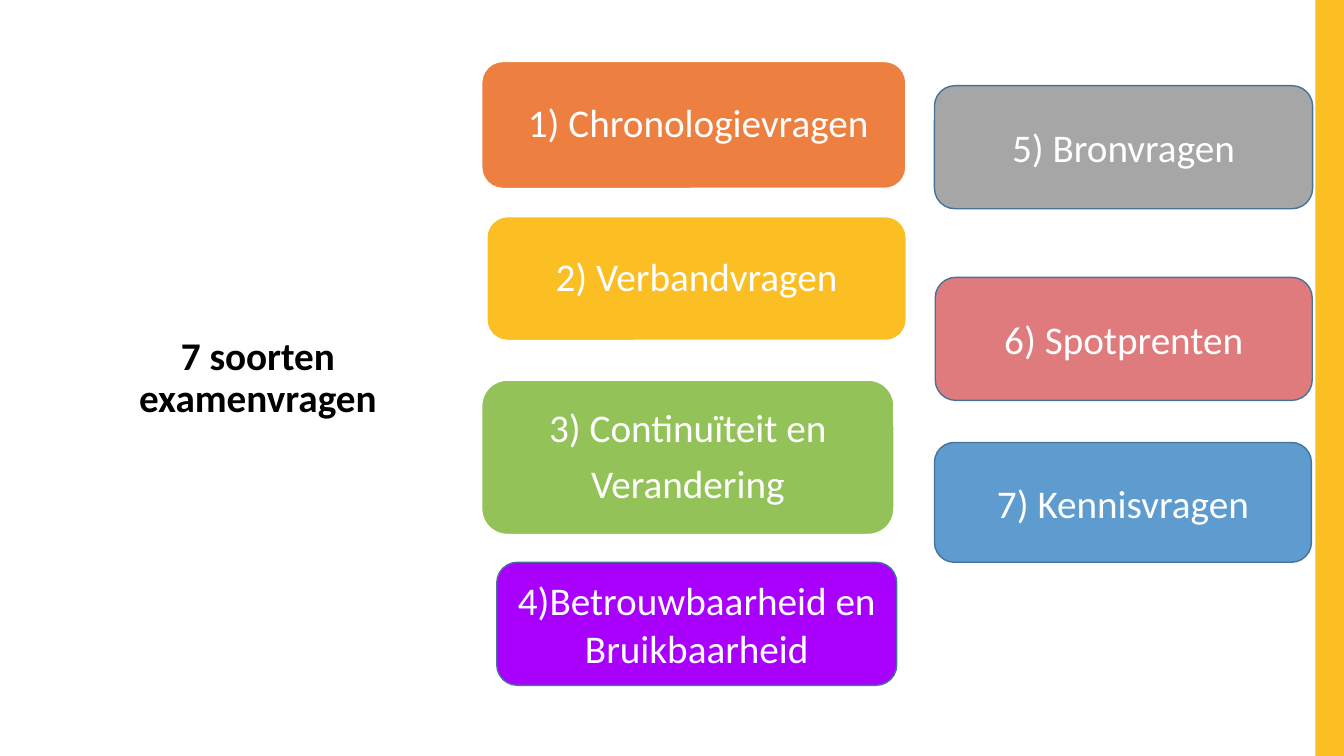
import pptx
import pptx.util
import pptx.dml.color
import pptx.enum.shapes
import pptx.enum.text

Cm = pptx.util.Cm
Pt = pptx.util.Pt
RGBColor = pptx.dml.color.RGBColor
Shape = pptx.enum.shapes.MSO_SHAPE

BLACK = RGBColor(0x00, 0x00, 0x00)
WHITE = RGBColor(0xFF, 0xFF, 0xFF)
AMBER = RGBColor(0xFB, 0xBF, 0x24)
ORANGE = RGBColor(0xED, 0x80, 0x40)
YELLOW = RGBColor(0xFB, 0xBE, 0x23)
GREEN = RGBColor(0x93, 0xC3, 0x58)
PURPLE = RGBColor(0xA9, 0x00, 0xFE)
GREY = RGBColor(0xA6, 0xA6, 0xA6)
ROSE = RGBColor(0xDF, 0x7B, 0x7D)
BLUE = RGBColor(0x5E, 0x9B, 0xCF)
STEEL = RGBColor(0x46, 0x73, 0x99)

QUESTION_TYPES = [
    ([" 1) Chronologievragen"], (12.14, 1.55, 10.69, 3.2), ORANGE, WHITE, 0.9),
    (["2) Verbandvragen"], (12.27, 5.46, 10.57, 3.12), YELLOW, WHITE, 0.9),
    (["3) Continuïteit en", "Verandering"], (12.14, 9.58, 10.39, 3.89), GREEN, WHITE, 0.9),
    (["4)Betrouwbaarheid en Bruikbaarheid"], (12.52, 14.17, 10.08, 3.1), PURPLE, STEEL, 1.0),
    (["5) Bronvragen"], (23.55, 2.16, 9.53, 3.1), GREY, STEEL, 1.0),
    (["6) Spotprenten"], (23.57, 6.99, 9.5, 3.1), ROSE, STEEL, 1.0),
    (["7) Kennisvragen"], (23.55, 11.15, 9.5, 3.02), BLUE, STEEL, 1.0),
]


class SlideBuilder:
    font_name = "Calibri"
    font_size = Pt(28)
    paragraph_gap = Pt(9.8)

    def __init__(self, page):
        self.page = page

    def label(self, box, lines, color, spacing, bold=False):
        frame = box.text_frame
        frame.word_wrap = True
        frame.vertical_anchor = pptx.enum.text.MSO_ANCHOR.MIDDLE
        for index, line in enumerate(lines):
            para = frame.add_paragraph() if index else frame.paragraphs[0]
            para.text = line
            para.alignment = pptx.enum.text.PP_ALIGN.CENTER
            para.line_spacing = spacing
            if index < len(lines) - 1:
                para.space_after = self.paragraph_gap
            para.font.name = self.font_name
            para.font.size = self.font_size
            para.font.bold = bold
            para.font.color.rgb = color

    def shape(self, kind, area, fill):
        box = self.page.shapes.add_shape(kind, *map(Cm, area))
        box.shadow.inherit = False
        box.fill.solid()
        box.fill.fore_color.rgb = fill
        return box

    def bar(self, area, fill):
        self.shape(Shape.RECTANGLE, area, fill).line.fill.background()

    def title(self, text, area):
        box = self.page.shapes.add_textbox(*map(Cm, area))
        self.label(box, [text], BLACK, 0.9, bold=True)

    def card(self, lines, area, fill, outline, spacing):
        box = self.shape(Shape.ROUNDED_RECTANGLE, area, fill)
        box.line.color.rgb = outline
        box.line.width = Pt(1)
        self.label(box, lines, WHITE, spacing)


def main():
    deck = pptx.Presentation()
    deck.slide_width = Cm(33.87)
    deck.slide_height = Cm(19.05)
    builder = SlideBuilder(deck.slides.add_slide(deck.slide_layouts[6]))
    builder.bar((33.15, 0, 0.72, 19.05), AMBER)
    builder.title("7 soorten examenvragen", (1.75, 1.78, 9.5, 15.52))
    for question_type in QUESTION_TYPES:
        builder.card(*question_type)
    deck.save("out.pptx")


if __name__ == "__main__":
    main()
